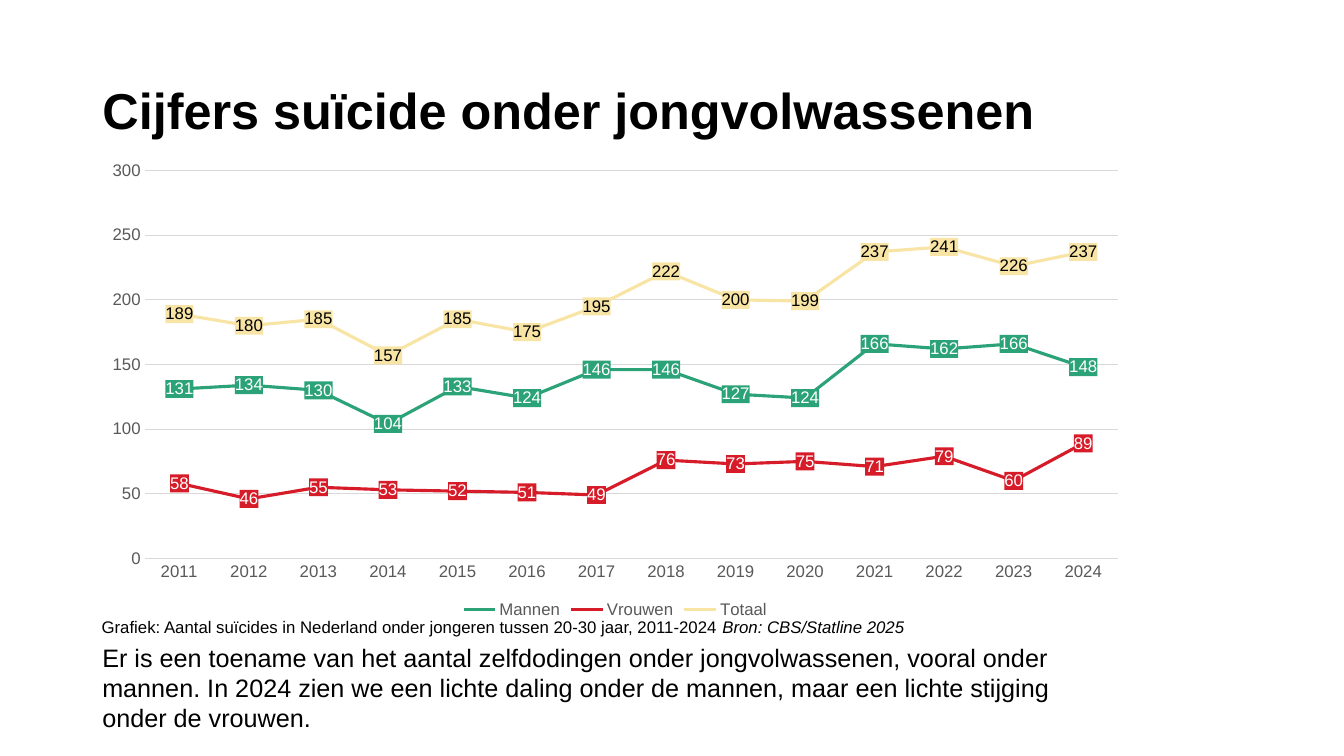
"""Build a slide with a line chart of suicide figures among young adults."""
from lxml import etree
from pptx import Presentation
from pptx import util as u
from pptx.chart.data import CategoryChartData
from pptx.dml.color import RGBColor
from pptx.enum import chart as charts, text
from pptx.oxml import parse_xml
from pptx.oxml.ns import nsdecls

COLORS = {"black": "000000", "white": "FFFFFF", "grey": "595959", "grid": "D9D9D9",
          "green": "2BA278", "red": "D61C29", "yellow": "F8E5A5"}
FONT = "Arial"
TITLE = "Cijfers suïcide onder jongvolwassenen"
SUMMARY = ("Er is een toename van het aantal zelfdodingen onder jongvolwassenen, vooral onder "
           "mannen. In 2024 zien we een lichte daling onder de mannen, maar een lichte stijging "
           "onder de vrouwen.")
CAPTION = "Grafiek: Aantal suïcides in Nederland onder jongeren tussen 20-30 jaar, 2011-2024 "
SOURCE = "Bron: CBS/Statline 2025"
YEARS = [str(year) for year in range(2011, 2025)]
SERIES = [
    ("Mannen", "green", "white",
     (131, 134, 130, 104, 133, 124, 146, 146, 127, 124, 166, 162, 166, 148)),
    ("Vrouwen", "red", "white",
     (58, 46, 55, 53, 52, 51, 49, 76, 73, 75, 71, 79, 60, 89)),
    ("Totaal", "yellow", "black",
     (189, 180, 185, 157, 185, 175, 195, 222, 200, 199, 237, 241, 226, 237)),
]
BOXES = {"title": (66, 28.75, 828, 104.4), "summary": (66, 455, 737.3, 72.7),
         "chart": (65.5, 108.7, 748, 336.2), "caption": (65.5, 437, 845.3, 21.8)}


def box(name):
    return [u.Pt(length) for length in BOXES[name]]


def rgb(color):
    return RGBColor.from_string(COLORS[color])


def style_font(font, size, color="black", bold=False, italic=False):
    font.name, font.size = FONT, u.Pt(size)
    font.bold, font.italic = bold, italic
    font.color.rgb = rgb(color)


def style_line(line, color, width):
    line.color.rgb = rgb(color)
    line.width = u.Pt(width)


def add_text(slide, name, size, runs):
    frame = slide.shapes.add_textbox(*box(name)).text_frame
    frame.word_wrap = True
    for content, italic in runs:
        run = frame.paragraphs[0].add_run()
        run.text = content
        style_font(run.font, size, italic=italic)


def style_series(series, color, label_color):
    series.smooth = False
    series.marker.style = charts.XL_MARKER_STYLE.NONE
    style_line(series.format.line, color, 2.25)
    labels = series.data_labels
    labels.show_value = True
    labels.position = charts.XL_LABEL_POSITION.CENTER
    style_font(labels.font, 12, label_color)
    fill = parse_xml(f'<c:spPr {nsdecls("c", "a")}><a:solidFill>'
                     f'<a:srgbClr val="{COLORS[color]}"/></a:solidFill></c:spPr>')
    text_properties = labels.font._element.getparent().getparent().getparent()
    text_properties.addprevious(fill)


def add_line_chart(slide):
    data = CategoryChartData()
    data.categories = YEARS
    for name, _, _, values in SERIES:
        data.add_series(name, values)
    chart = slide.shapes.add_chart(charts.XL_CHART_TYPE.LINE, *box("chart"), data).chart
    style_font(chart.font, 10)
    chart.has_title = False
    chart.has_legend = True
    chart.legend.position = charts.XL_LEGEND_POSITION.BOTTOM
    chart.legend.include_in_layout = False
    style_font(chart.legend.font, 12, "grey")
    for axis in (chart.category_axis, chart.value_axis):
        axis.major_tick_mark = axis.minor_tick_mark = charts.XL_TICK_MARK.NONE
        style_font(axis.tick_labels.font, 12, "grey")
    style_line(chart.category_axis.format.line, "grid", 0.75)
    values_axis = chart.value_axis
    values_axis.minimum_scale, values_axis.maximum_scale, values_axis.major_unit = 0, 300, 50
    values_axis.format.line.fill.background()
    style_line(values_axis.major_gridlines.format.line, "grid", 0.75)
    plot = chart.plots[0]
    plot.vary_by_categories = False
    for series, (_, color, label_color, _) in zip(plot.series, SERIES):
        style_series(series, color, label_color)


def main():
    presentation = Presentation()
    presentation.slide_width, presentation.slide_height = u.Pt(960), u.Pt(540)
    slide = presentation.slides.add_slide(presentation.slide_layouts[5])
    title = slide.shapes.title
    title.left, title.top, title.width, title.height = box("title")
    title.text_frame.text = TITLE
    title.text_frame.vertical_anchor = text.MSO_ANCHOR.MIDDLE
    paragraph = title.text_frame.paragraphs[0]
    paragraph.alignment = text.PP_ALIGN.LEFT
    paragraph.line_spacing = 0.9
    style_font(paragraph.runs[0].font, 36, bold=True)
    add_text(slide, "summary", 18, [(SUMMARY, False)])
    add_line_chart(slide)
    add_text(slide, "caption", 12, [(CAPTION, False), (SOURCE, True)])
    presentation.save("out.pptx")


if __name__ == "__main__":
    main()
